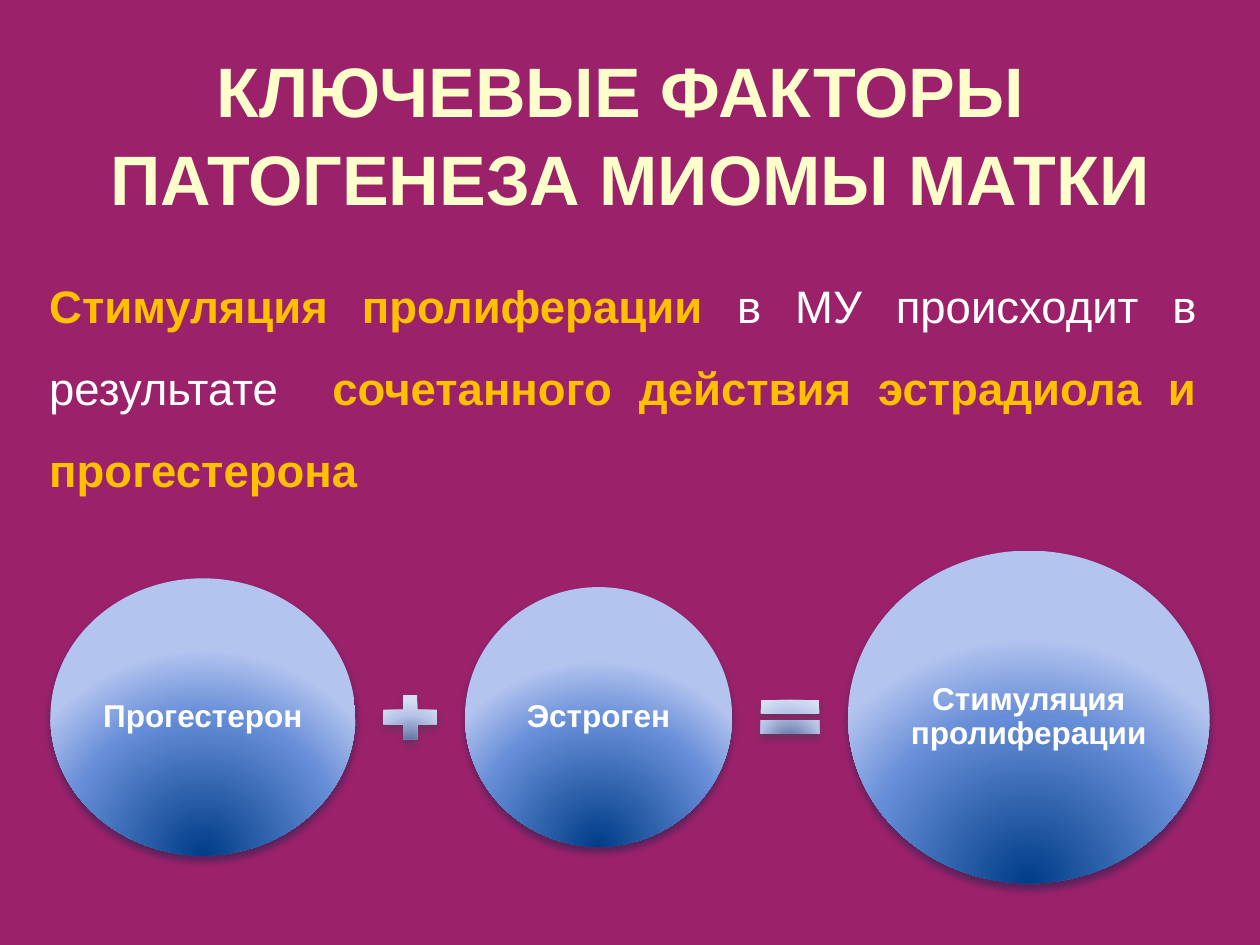
"""Build the slide on the key factors of uterine fibroid pathogenesis."""
from pptx import Presentation
from pptx.dml.color import RGBColor
from pptx.enum.shapes import MSO_SHAPE
from pptx.enum.text import MSO_ANCHOR, MSO_AUTO_SIZE, PP_ALIGN
from pptx.oxml import parse_xml
from pptx.oxml.ns import nsdecls
from pptx.util import Inches, Pt

CIRCLE, PLUS, EQUALS = MSO_SHAPE.OVAL, MSO_SHAPE.MATH_PLUS, MSO_SHAPE.MATH_EQUAL
CENTER, JUSTIFY = PP_ALIGN.CENTER, PP_ALIGN.JUSTIFY
TOP, MIDDLE = MSO_ANCHOR.TOP, MSO_ANCHOR.MIDDLE
TITLE_ONLY = 5

PLUM = RGBColor(0x9B, 0x21, 0x6B)
CREAM = RGBColor(0xFF, 0xFF, 0xCC)
GOLD = RGBColor(0xFF, 0xC0, 0x00)
WHITE = RGBColor(0xFF, 0xFF, 0xFF)
CIRCLE_STOPS = [RGBColor(0x00, 0x3D, 0x87), RGBColor(0x66, 0x8D, 0xD7), RGBColor(0xB3, 0xC4, 0xEF)]
SIGN_STOPS = [RGBColor(0x4A, 0x5F, 0x8F), RGBColor(0xB7, 0xC5, 0xE7), RGBColor(0xD5, 0xDE, 0xF5)]
CIRCLE_SHADOW = RGBColor(0x04, 0x27, 0x47)
SIGN_SHADOW = RGBColor(0x3C, 0x41, 0x4F)


def write(shape, runs, size, align=CENTER, anchor=MIDDLE, insets=(0.03, 0.03, 0.03, 0.03), spacing=1.0):
    frame = shape.text_frame
    frame.word_wrap = True
    frame.auto_size = MSO_AUTO_SIZE.NONE
    frame.vertical_anchor = anchor
    frame.margin_left, frame.margin_top, frame.margin_right, frame.margin_bottom = map(Inches, insets)
    paragraph = frame.paragraphs[0]
    paragraph.alignment = align
    paragraph.line_spacing = spacing
    for position, (text, color, bold) in enumerate(runs):
        for part, line in enumerate(text.split("\n")):
            if part:
                paragraph.add_line_break()
            run = paragraph.add_run()
            run.text = line
            run.font.name = "Arial"
            run.font.size = Pt(size)
            run.font.bold = bold
            run.font.color.rgb = color


def shade(shape, colors, shadow_color):
    shape.line.fill.background()
    shape.fill.background()
    shape.shadow.inherit = False
    stops = "".join(
        f'<a:gs pos="{pos}"><a:srgbClr val="{color}"/></a:gs>'
        for pos, color in zip((0, 68000, 100000), colors)
    )
    properties = shape.element.spPr
    no_fill = properties.find("{*}noFill")
    properties.replace(no_fill, parse_xml(
        f'<a:gradFill {nsdecls("a")} rotWithShape="1"><a:gsLst>{stops}</a:gsLst>'
        '<a:path path="circle"><a:fillToRect l="50000" t="130000" r="50000" b="-30000"/></a:path>'
        '</a:gradFill>'
    ))
    properties.find("{*}effectLst").append(parse_xml(
        f'<a:outerShdw {nsdecls("a")} blurRad="{Pt(4.5)}" dist="{Pt(3)}" dir="5400000" rotWithShape="0">'
        f'<a:srgbClr val="{shadow_color}"><a:alpha val="48000"/></a:srgbClr></a:outerShdw>'
    ))


deck = Presentation()
deck.slide_width, deck.slide_height = Inches(10), Inches(7.5)
slide = deck.slides.add_slide(deck.slide_layouts[TITLE_ONLY])
slide.background.fill.solid()
slide.background.fill.fore_color.rgb = PLUM

heading = slide.shapes.title
heading.left, heading.top, heading.width, heading.height = map(Inches, (0.47, 0.03, 9.06, 1.97))
write(heading, [("КЛЮЧЕВЫЕ ФАКТОРЫ \nПАТОГЕНЕЗА МИОМЫ МАТКИ", CREAM, True)], 40,
      insets=(0, 0.05, 0, 0), spacing=1.05)

statement = slide.shapes.add_textbox(Inches(0.39), Inches(1.94), Inches(9.21), Inches(1.97))
write(statement, [
    ("Стимуляция пролиферации ", GOLD, True),
    ("в МУ происходит в результате  ", WHITE, False),
    ("сочетанного действия эстрадиола и прогестерона", GOLD, True),
], 26, align=JUSTIFY, anchor=TOP, insets=(0, 0.05, 0.1, 0.05), spacing=1.5)

equation = [
    (CIRCLE, 2.42, 2.2, "Прогестерон"),
    (PLUS, 0.58, 0.48, ""),
    (CIRCLE, 2.12, 2.06, "Эстроген"),
    (EQUALS, 0.63, 0.46, ""),
    (CIRCLE, 2.87, 2.64, "Стимуляция пролиферации"),
]
left, right, middle = 0.4, 9.6, 5.69
gap = (right - left - sum(term[1] for term in equation)) / (len(equation) - 1)
for kind, width, height, label in equation:
    term = slide.shapes.add_shape(
        kind, Inches(left), Inches(middle - height / 2), Inches(width), Inches(height))
    if label:
        shade(term, CIRCLE_STOPS, CIRCLE_SHADOW)
        write(term, [(label, WHITE, True)], 18, spacing=0.9)
    else:
        shade(term, SIGN_STOPS, SIGN_SHADOW)
    left += width + gap

deck.save("out.pptx")
